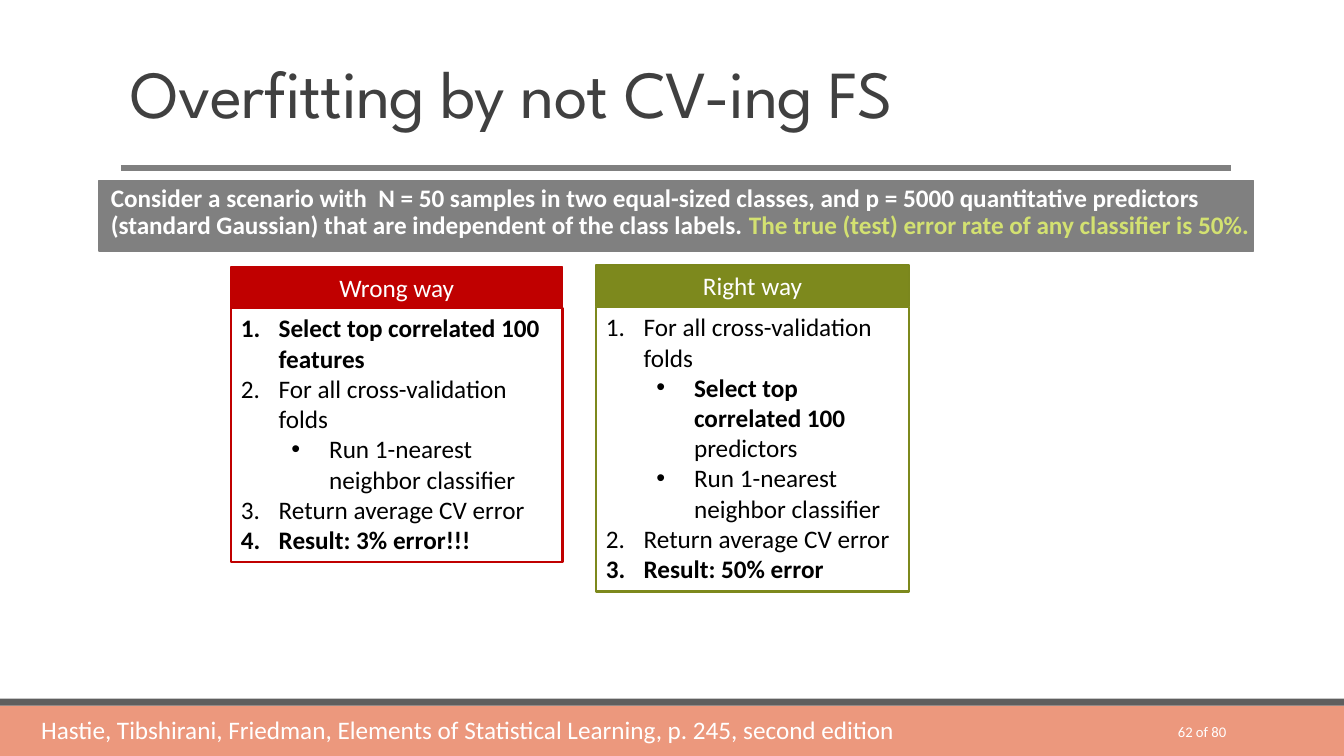
"""Build a slide contrasting wrong and right feature selection under cross-validation."""
from lxml.etree import SubElement
from pptx import Presentation
from pptx.dml.color import RGBColor
from pptx.enum.shapes import MSO_CONNECTOR, MSO_SHAPE
from pptx.enum.text import MSO_ANCHOR, PP_ALIGN
from pptx.oxml.ns import qn
from pptx.util import Pt

WHITE = RGBColor(0xFF, 0xFF, 0xFF)
BLACK = RGBColor(0, 0, 0)
CHARCOAL = RGBColor(0x40, 0x40, 0x40)
DARK_GRAY = RGBColor(0x5E, 0x5E, 0x5E)
GRAY = RGBColor(0x80, 0x80, 0x80)
SALMON = RGBColor(0xEC, 0x98, 0x7D)
LIME = RGBColor(0xD3, 0xE1, 0x71)
RED = RGBColor(0xC0, 0, 0)
OLIVE = RGBColor(0x7D, 0x89, 0x1D)
OLIVE_EDGE = RGBColor(0x7B, 0x87, 0x1D)

deck = Presentation()
deck.slide_width, deck.slide_height = Pt(960), Pt(540)
slide = deck.slides.add_slide(deck.slide_layouts[6])


def add_box(left, top, width, height, fill=None, line=None, line_width=1.25):
    box = slide.shapes.add_shape(MSO_SHAPE.RECTANGLE, Pt(left), Pt(top), Pt(width), Pt(height))
    box.shadow.inherit = False
    if fill is None:
        box.fill.background()
    else:
        box.fill.solid()
        box.fill.fore_color.rgb = fill
    if line is None:
        box.line.fill.background()
    else:
        box.line.color.rgb = line
        box.line.width = Pt(line_width)
    return box


def write(shape, paragraphs, size=18, font="Calibri", color=WHITE, align=PP_ALIGN.LEFT,
          anchor=MSO_ANCHOR.TOP, line_spacing=None, space_before=None, indent=0,
          side_inset=7.2, tracking=None):
    """Write paragraphs given as (marker, runs), each run as (text, bold[, color])."""
    frame = shape.text_frame
    frame.word_wrap = True
    frame.vertical_anchor = anchor
    frame.margin_left = frame.margin_right = Pt(side_inset)
    frame.margin_top = frame.margin_bottom = Pt(3.6)
    for index, (marker, runs) in enumerate(paragraphs):
        paragraph = frame.add_paragraph() if index else frame.paragraphs[0]
        paragraph.alignment = align
        paragraph.line_spacing = line_spacing
        if space_before is not None:
            paragraph.space_before = Pt(space_before)
        properties = paragraph._p.get_or_add_pPr()
        properties.set("marL", str(Pt(indent)))
        if marker:
            paragraph.level = 1 if marker == "•" else 0
            properties.set("marL", str(Pt(63 if marker == "•" else 27)))
            properties.set("indent", str(Pt(-27)))
        if marker == "•":
            SubElement(properties, qn("a:buFont"), typeface="Arial")
            SubElement(properties, qn("a:buChar"), char=marker)
        elif marker:
            SubElement(properties, qn("a:buFont"), typeface="+mj-lt")
            SubElement(properties, qn("a:buAutoNum"), type="arabicPeriod")
        for text, bold, *own_color in runs:
            run = paragraph.add_run()
            run.text = text
            run.font.size, run.font.name, run.font.bold = Pt(size), font, bold
            run.font.color.rgb = own_color[0] if own_color else color
            if tracking is not None:
                run._r.get_or_add_rPr().set("spc", str(tracking))


add_box(0, 504, 960, 36, fill=SALMON)
add_box(0, 499, 960, 5, fill=DARK_GRAY)
title_rule = slide.shapes.add_connector(MSO_CONNECTOR.STRAIGHT, Pt(86.4), Pt(120), Pt(879), Pt(120))
title_rule.line.color.rgb = GRAY
title_rule.line.width = Pt(4.25)
SubElement(title_rule._element.spPr, qn("a:effectLst"))

title = slide.shapes.add_textbox(Pt(86.4), Pt(22.5), Pt(792), Pt(95))
write(title, [(None, [("Overfitting by not CV-ing FS", False)])], size=48, font="League Spartan",
      color=CHARCOAL, anchor=MSO_ANCHOR.MIDDLE, line_spacing=0.85, tracking=-50)

scenario = add_box(70.5, 129, 825, 50.4, fill=GRAY, line=GRAY)
write(scenario, [(None, [
    ("Consider a scenario with  N = 50 samples in two equal-sized classes, and p = 5000 quantitative "
     "predictors (standard Gaussian) that are independent of the class labels. ", True),
    ("The true (test) error rate of any classifier is 50%.", True, LIME),
])], line_spacing=0.9, space_before=6, indent=8.64, side_inset=0)

citation = slide.shapes.add_textbox(Pt(22.3), Pt(507), Pt(675), Pt(29))
write(citation, [(None, [
    ("Hastie, Tibshirani, Friedman, Elements of Statistical Learning, p. 245, second edition", False)])])

folds = ("1.", [("For all cross-validation folds", False)])
classify = ("•", [("Run 1-nearest neighbor classifier", False)])
average = ("1.", [("Return average CV error", False)])
wrong_steps = [
    ("1.", [("Select top correlated 100 features", True)]),
    folds, classify, average,
    ("1.", [("Result: 3% error!!!", True)]),
]
right_steps = [
    folds,
    ("•", [("Select top correlated 100 ", True), ("predictors", False)]),
    classify, average,
    ("1.", [("Result: 50% error", True)]),
]

for heading, steps, left, top, width, split, bottom, color, edge in (
    ("Wrong way", wrong_steps, 165, 190.8, 236.8, 219.8, 401.2, RED, RED),
    ("Right way", right_steps, 425.7, 189.4, 223.7, 219, 422.5, OLIVE, OLIVE_EDGE),
):
    header = add_box(left, top, width, split - top, fill=color, line=edge)
    write(header, [(None, [(heading, False)])], align=PP_ALIGN.CENTER)
    procedure = add_box(left, split, width, bottom - split, line=color, line_width=1.5)
    write(procedure, steps, color=BLACK)

page = slide.shapes.add_textbox(Pt(780), Pt(508.5), Pt(103), Pt(28.75))
write(page, [(None, [("62 of 80", False)])], size=10.5, align=PP_ALIGN.RIGHT, anchor=MSO_ANCHOR.MIDDLE)

deck.save("out.pptx")
